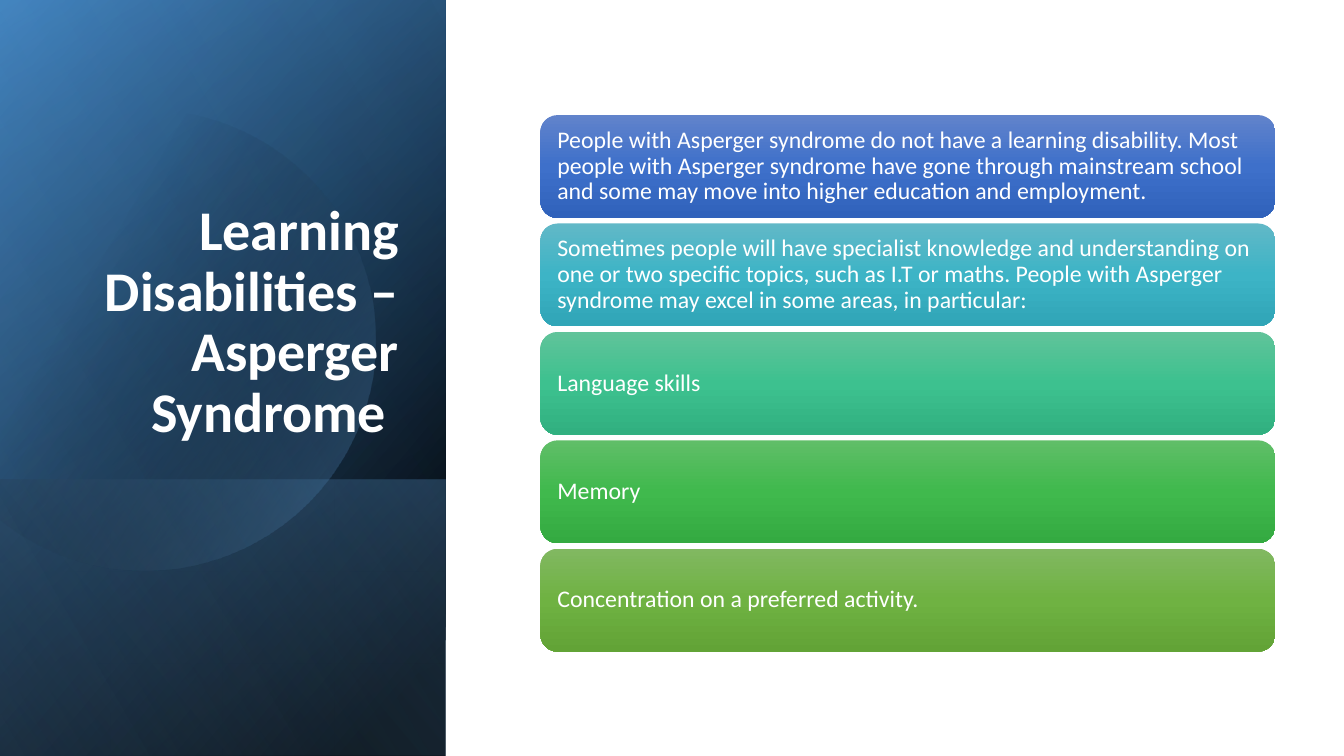
from collections import namedtuple
from dataclasses import dataclass
from math import acos, cos, sin

from pptx import Presentation
from pptx.dml.color import RGBColor
from pptx.enum.shapes import MSO_SHAPE
from pptx.enum.text import MSO_ANCHOR, PP_ALIGN
from pptx.oxml import parse_xml
from pptx.oxml.ns import nsdecls
from pptx.util import Cm, Pt

Box = namedtuple("Box", "left top width height")


@dataclass(frozen=True)
class Theme:
    """Colours, font and type sizes of the slide."""
    font: str = "Calibri"
    title_size: int = 40
    card_size: int = 17
    text: str = "FFFFFF"
    black: str = "000000"
    deep_blue: str = "2E75B6"
    blue: str = "5B9BD5"
    pale_blue: str = "9DC3E6"
    cards: tuple = (
        ("6183CB", "3E70CA", "3062BB"),
        ("61B8C7", "3DB4C6", "30A5B7"),
        ("60C39A", "3DC18F", "31B080"),
        ("60BE68", "40B94D", "34AA41"),
        ("81B861", "6FB242", "62A336"),
    )


THEME = Theme()
TITLE = "Learning Disabilities – Asperger Syndrome "
POINTS = (
    "People with Asperger syndrome do not have a learning disability. Most people with "
    "Asperger syndrome have gone through mainstream school and some may move into higher "
    "education and employment.",
    "Sometimes people will have specialist knowledge and understanding on one or two specific "
    "topics, such as I.T or maths. People with Asperger syndrome may excel in some areas, in "
    "particular:",
    "Language skills",
    "Memory",
    "Concentration on a preferred activity.",
)


def set_format(target, values):
    """Set each named attribute of the target."""
    for name, value in values.items():
        setattr(target, name, value)


def paint(shape, stops, angle):
    """Fill a shape with (position, colour, opacity) stops, without outline or shadow."""
    marks = "".join(
        f'<a:gs pos="{position * 1000}"><a:srgbClr val="{colour}">'
        f'<a:alpha val="{opacity * 1000}"/></a:srgbClr></a:gs>'
        for position, colour, opacity in stops
    )
    shape._element.spPr.append(parse_xml(
        f'<a:gradFill {nsdecls("a")} rotWithShape="1"><a:gsLst>{marks}</a:gsLst>'
        f'<a:lin ang="{angle * 60000}" scaled="0"/></a:gradFill>'
    ))
    shape.line.fill.background()
    shape.shadow.inherit = False


def write(shape, text, frame_format, paragraph_format, size, bold=False):
    """Put one formatted paragraph into a shape."""
    frame = shape.text_frame
    set_format(frame, {"word_wrap": True, **frame_format})
    paragraph = frame.paragraphs[0]
    paragraph.text = text
    set_format(paragraph, {"line_spacing": 0.9, **paragraph_format})
    set_format(paragraph.font, {"name": THEME.font, "size": Pt(size), "bold": bold})
    paragraph.font.color.rgb = RGBColor.from_string(THEME.text)


def add_veil(slide, box, stops, angle):
    """Lay a gradient rectangle over the box."""
    paint(slide.shapes.add_shape(MSO_SHAPE.RECTANGLE, *map(Cm, box)), stops, angle)


def add_disc(slide, box, steps=120):
    """Draw the translucent disc, cut off at the left edge of the box."""
    radius, centre_x, centre_y = 5.81, 3.65, 8.56
    reach = acos(-centre_x / radius)
    angles = (reach * (2 * step / steps - 1) for step in range(steps + 1))
    rim = [
        (Cm(box.left + centre_x + radius * cos(angle)),
         Cm(box.top + centre_y + radius * sin(angle)))
        for angle in angles
    ]
    outline = slide.shapes.build_freeform(*rim[0])
    outline.add_line_segments(rim[1:], close=True)
    paint(outline.convert_to_shape(), ((29, THEME.black, 0), (100, THEME.blue, 43)), 30)


def add_title_panel(slide, box):
    """Build the dark side panel with the title."""
    foot = 6.96
    add_veil(slide, box, ((8, THEME.black, 100), (100, THEME.deep_blue, 100)), 220)
    add_veil(slide, box, ((0, THEME.black, 0), (99, THEME.blue, 46)), 240)
    add_veil(slide, box._replace(top=box.top + box.height - foot, height=foot),
             ((2, THEME.blue, 29), (100, THEME.black, 30)), 140)
    add_disc(slide, box)
    add_veil(slide, box, ((0, THEME.black, 0), (99, THEME.pale_blue, 11)), 150)
    title = slide.shapes.add_textbox(
        Cm(box.left + 1.63), Cm(box.top + 4.67), Cm(box.width - 2.56), Cm(6.65))
    write(title, TITLE, {"vertical_anchor": MSO_ANCHOR.BOTTOM},
          {"alignment": PP_ALIGN.RIGHT}, THEME.title_size, bold=True)


def add_cards(slide, box):
    """Stack one rounded card per point down the box."""
    gap = 0.14
    height = (box.height - gap * (len(POINTS) - 1)) / len(POINTS)
    margins = {f"margin_{side}": Cm(0.3) for side in ("left", "right", "top", "bottom")}
    for row, (point, colours) in enumerate(zip(POINTS, THEME.cards)):
        card = slide.shapes.add_shape(
            MSO_SHAPE.ROUNDED_RECTANGLE, Cm(box.left), Cm(box.top + row * (height + gap)),
            Cm(box.width), Cm(height))
        paint(card, [(50 * stop, colour, 100) for stop, colour in enumerate(colours)], 90)
        write(card, point, {"vertical_anchor": MSO_ANCHOR.MIDDLE, **margins},
              {"alignment": PP_ALIGN.LEFT}, THEME.card_size)


def main():
    """Build and save the slide."""
    presentation = Presentation()
    set_format(presentation, {"slide_width": Cm(33.87), "slide_height": Cm(19.05)})
    slide = presentation.slides.add_slide(presentation.slide_layouts[6])
    add_title_panel(slide, Box(0, 0, 11.23, 19.05))
    add_cards(slide, Box(13.62, 2.9, 18.52, 13.52))
    presentation.save("out.pptx")


if __name__ == "__main__":
    main()
